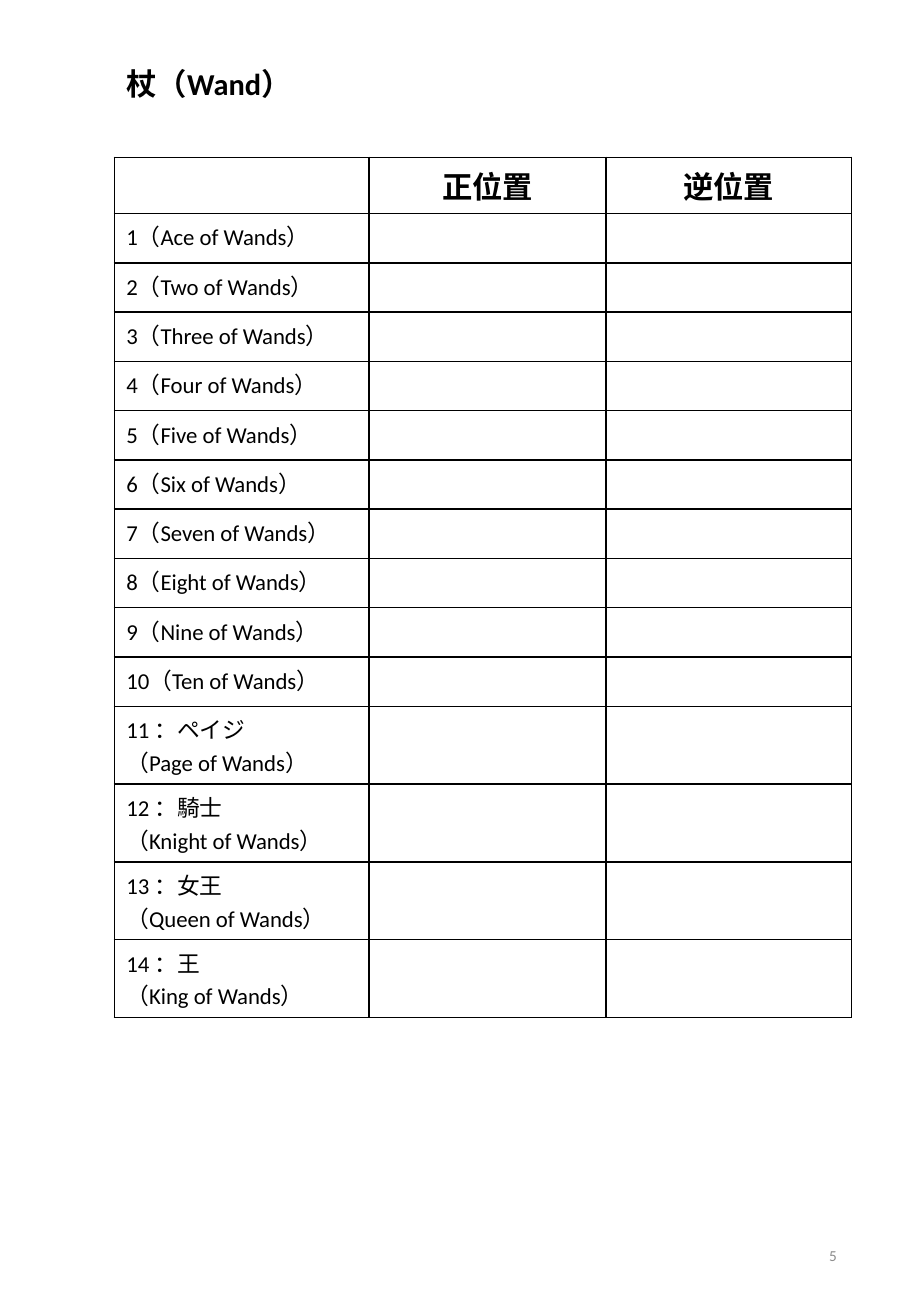
from lxml.etree import SubElement
from pptx import Presentation
from pptx.dml.color import RGBColor
from pptx.enum.text import MSO_ANCHOR as Anchor, MSO_AUTO_SIZE as AutoSize, PP_ALIGN as Align
from pptx.oxml.ns import qn
from pptx.util import Cm, Pt

TITLE = "杖（Wand）"
PAGE_NUMBER = "5"
HEADERS = ["", "正位置", "逆位置"]
NUMBER_CARDS = ["Ace", "Two", "Three", "Four", "Five", "Six", "Seven", "Eight", "Nine", "Ten"]
COURT_CARDS = [("ペイジ", "Page"), ("騎士", "Knight"), ("女王", "Queen"), ("王", "King")]

COLORS = {"ink": "000000", "page": "8C8C8C"}
FONT = "Calibri"
LEFT = Cm(2.39)
COLUMN_WIDTHS = [Cm(5.33), Cm(4.95), Cm(5.13)]
ROW_HEIGHT = Cm(1.03)

card_labels = [f"{number}（{name} of Wands）" for number, name in enumerate(NUMBER_CARDS, 1)]
card_labels += [
    f"{number} ：{japanese}\n（{english} of Wands）"
    for number, (japanese, english) in enumerate(COURT_CARDS, len(NUMBER_CARDS) + 1)
]
rows = [HEADERS] + [[label, "", ""] for label in card_labels]


def write(text_frame, text, size, color="ink", bold=False, align=Align.LEFT):
    text_frame.text = text
    for paragraph in text_frame.paragraphs:
        paragraph.alignment = align
        for run in paragraph.runs:
            run.font.name = FONT
            run.font.size = Pt(size)
            run.font.bold = bold
            run.font.color.rgb = RGBColor.from_string(COLORS[color])


def add_borders(cell):
    properties = cell._tc.get_or_add_tcPr()
    for side in ("lnL", "lnR", "lnT", "lnB"):
        line = SubElement(properties, qn(f"a:{side}"), w=str(Pt(1)))
        fill = SubElement(line, qn("a:solidFill"))
        SubElement(fill, qn("a:srgbClr"), val=COLORS["ink"])


def main():
    presentation = Presentation()
    presentation.slide_width, presentation.slide_height = Cm(19.05), Cm(27.51)
    slide = presentation.slides.add_slide(presentation.slide_layouts[5])

    title = slide.shapes.title
    title.left, title.top, title.width, title.height = LEFT, Cm(1.24), Cm(7.47), Cm(1.02)
    title.text_frame.auto_size = AutoSize.NONE
    title.text_frame.vertical_anchor = Anchor.TOP
    write(title.text_frame, TITLE, 18, bold=True)

    table = slide.shapes.add_table(
        len(rows), len(HEADERS), LEFT, Cm(3.29), sum(COLUMN_WIDTHS), ROW_HEIGHT * len(rows)
    ).table
    table.first_row = table.horz_banding = False
    for column, width in zip(table.columns, COLUMN_WIDTHS):
        column.width = width
    for row_index, texts in enumerate(rows):
        table.rows[row_index].height = ROW_HEIGHT
        is_header = row_index == 0
        for column_index, text in enumerate(texts):
            cell = table.cell(row_index, column_index)
            add_borders(cell)
            cell.fill.background()
            write(cell.text_frame, text, 18 if is_header else 13.5, bold=is_header,
                  align=Align.CENTER if is_header else Align.LEFT)

    page = slide.shapes.add_textbox(Cm(13.46), Cm(25.5), Cm(4.29), Cm(1.47))
    page.text_frame.word_wrap = True
    page.text_frame.vertical_anchor = Anchor.MIDDLE
    write(page.text_frame, PAGE_NUMBER, 9, color="page", align=Align.RIGHT)

    presentation.save("out.pptx")


if __name__ == "__main__":
    main()
